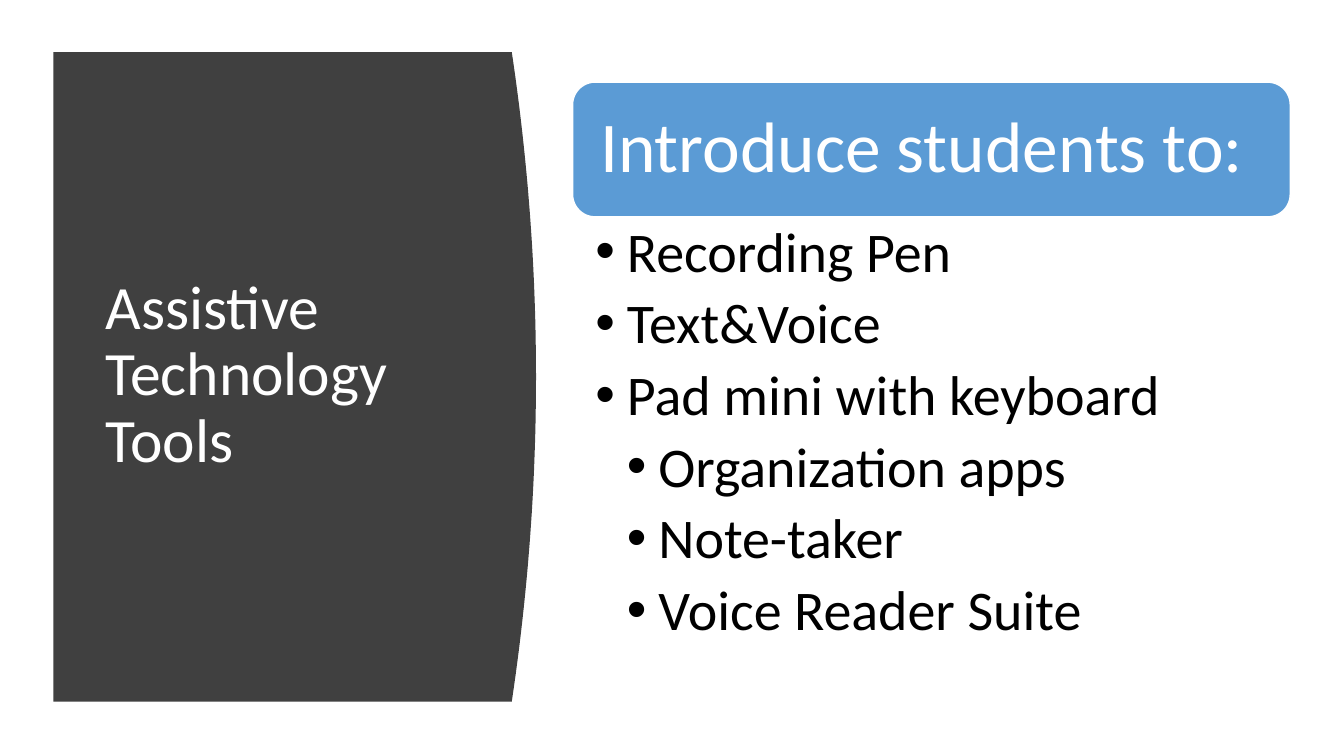
from dataclasses import dataclass
from typing import Any

from pptx import Presentation
from pptx.dml.color import RGBColor as RGB
from pptx.enum.shapes import MSO_SHAPE as Shape
from pptx.enum.text import MSO_ANCHOR as Anchor, MSO_AUTO_SIZE as AutoSize, PP_ALIGN as Align
from pptx.oxml.ns import qn
from pptx.util import Pt
from lxml.etree import SubElement


@dataclass(frozen=True)
class Theme:
    font: str = "Calibri"
    panel: RGB = RGB(0x40, 0x40, 0x40)
    accent: RGB = RGB(0x5B, 0x9B, 0xD5)
    light: RGB = RGB(0xFF, 0xFF, 0xFF)
    dark: RGB = RGB(0, 0, 0)
    title: float = 44
    heading: float = 51
    item: float = 40


@dataclass(frozen=True)
class Box:
    left: float
    top: float
    width: float
    height: float


@dataclass(frozen=True)
class Item:
    text: str
    level: int = 0


THEME = Theme()
PANEL = Box(38.2, 37.2, 327.4, 463.9)
PANEL_BULGE = 17.3
CURVE_STEPS = 48
TITLE = Box(68.2, 79.9, 269.3, 377.3)
HEADING = Box(409, 58.7, 512.6, 96.2)
LIST = Box(409, 154.8, 512.6, 324)
INDENT = 22.5

ITEMS = [
    Item("Recording Pen"),
    Item("Text&Voice"),
    Item("Pad mini with keyboard"),
    Item("Organization apps", 1),
    Item("Note-taker", 1),
    Item("Voice Reader Suite", 1),
]


def place(sp: Any, box: Box) -> None:
    sp.left, sp.top = Pt(box.left), Pt(box.top)
    sp.width, sp.height = Pt(box.width), Pt(box.height)


def frame(tf: Any, anchor: Anchor, left: float, top: float, right: float, bottom: float) -> None:
    tf.word_wrap = True
    tf.auto_size = AutoSize.NONE
    tf.vertical_anchor = anchor
    tf.margin_left, tf.margin_top = Pt(left), Pt(top)
    tf.margin_right, tf.margin_bottom = Pt(right), Pt(bottom)


def write(p: Any, text: str, *, size: float, color: RGB, after: float = 0) -> None:
    p.alignment = Align.LEFT
    p.line_spacing = 0.9
    p.space_before, p.space_after = Pt(0), Pt(after)
    r = p.add_run()
    r.text = text
    r.font.name, r.font.size = THEME.font, Pt(size)
    r.font.color.rgb = color


def add_bullet(p: Any, level: int) -> None:
    p.level = level
    props = p._p.get_or_add_pPr()
    props.set("marL", str(Pt(INDENT * (level + 1))))
    props.set("indent", str(-Pt(INDENT)))
    SubElement(props, qn("a:buFont")).set("typeface", "Arial")
    SubElement(props, qn("a:buChar")).set("char", "•")


def paint(sp: Any, color: RGB) -> None:
    sp.shadow.inherit = False
    sp.fill.solid()
    sp.fill.fore_color.rgb = color
    sp.line.fill.background()


def add_panel(s: Any) -> Any:
    """Draw a rectangle whose right side bulges as a parabola."""
    right, bottom = PANEL.left + PANEL.width, PANEL.top + PANEL.height
    builder = s.shapes.build_freeform(Pt(PANEL.left), Pt(PANEL.top))
    curve = []
    for step in range(CURVE_STEPS + 1):
        t = step / CURVE_STEPS
        x = right + PANEL_BULGE * (1 - (2 * t - 1) ** 2)
        curve.append((Pt(x), Pt(PANEL.top + PANEL.height * t)))
    builder.add_line_segments(curve + [(Pt(PANEL.left), Pt(bottom))], close=True)
    sp = builder.convert_to_shape()
    paint(sp, THEME.panel)
    return sp


def add_heading(s: Any, text: str) -> None:
    sp = s.shapes.add_shape(Shape.ROUNDED_RECTANGLE, 0, 0, 0, 0)
    place(sp, HEADING)
    paint(sp, THEME.accent)
    sp.line.color.rgb = THEME.light
    sp.line.width = Pt(1)
    frame(sp.text_frame, Anchor.MIDDLE, 15, 15, 15, 15)
    write(sp.text_frame.paragraphs[0], text, size=THEME.heading, color=THEME.light)


def add_items(sp: Any, items: list[Item]) -> None:
    place(sp, LIST)
    tf = sp.text_frame
    frame(tf, Anchor.TOP, 16.3, 5, 28.8, 5)
    for i, item in enumerate(items):
        p = tf.add_paragraph() if i else tf.paragraphs[0]
        write(p, item.text, size=THEME.item, color=THEME.dark, after=8)
        add_bullet(p, item.level)


def main() -> None:
    prs = Presentation()
    prs.slide_width, prs.slide_height = Pt(960), Pt(540)
    s = prs.slides.add_slide(prs.slide_layouts[1])

    # Dark panel behind the title
    title = s.shapes.title
    title.element.addprevious(add_panel(s).element)
    place(title, TITLE)
    frame(title.text_frame, Anchor.MIDDLE, 7.2, 3.6, 7.2, 3.6)
    write(title.text_frame.paragraphs[0], "Assistive Technology Tools",
          size=THEME.title, color=THEME.light)

    # Heading bar and list of tools
    add_heading(s, "Introduce students to:")
    add_items(s.placeholders[1], ITEMS)

    prs.save("out.pptx")


if __name__ == "__main__":
    main()
